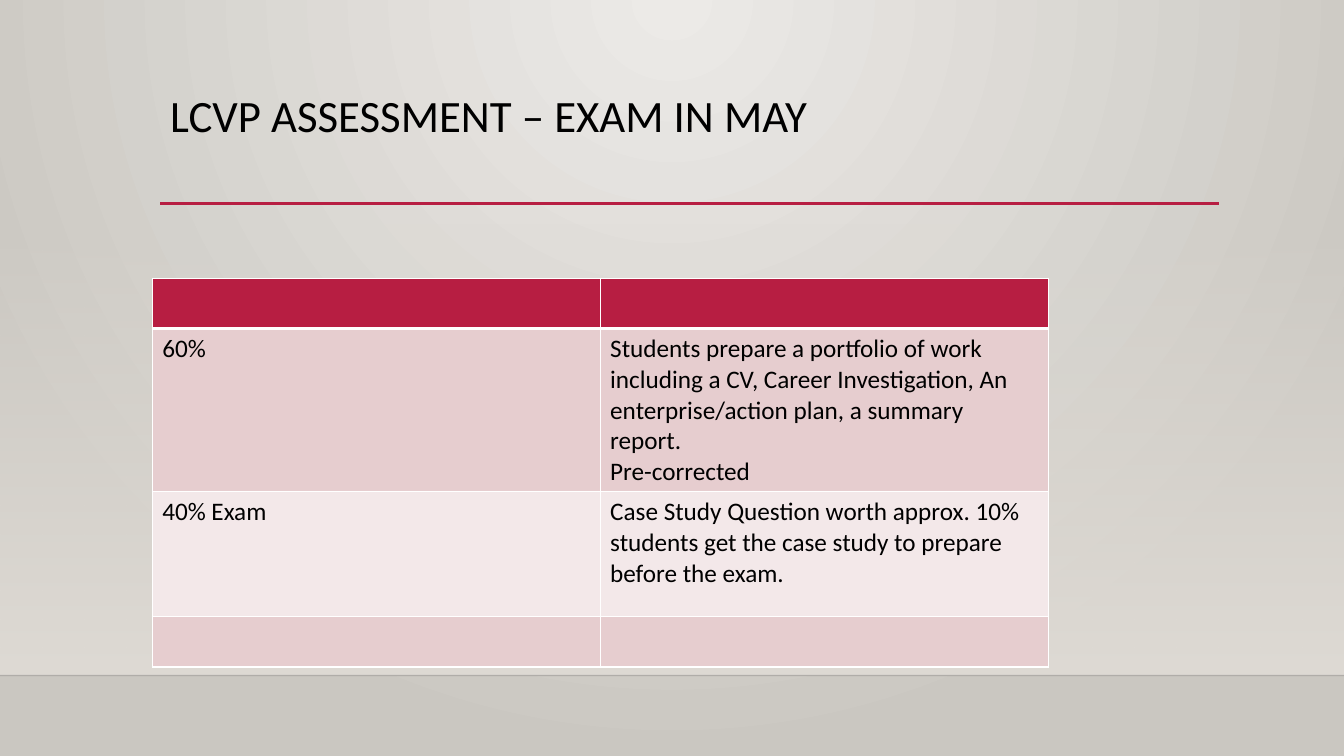
from dataclasses import dataclass

from lxml.etree import SubElement
from pptx import Presentation
from pptx.dml.color import RGBColor
from pptx.enum.shapes import MSO_CONNECTOR as Connector, MSO_SHAPE as Shape
from pptx.enum.text import MSO_ANCHOR as Anchor
from pptx.oxml import parse_xml
from pptx.oxml.ns import nsdecls, qn
from pptx.util import Pt


@dataclass(frozen=True)
class Theme:
    font: str = "Calibri"
    title_size: int = 32
    body_size: int = 18
    text: str = "000000"
    accent: str = "B71E42"
    band_dark: str = "E6CDCF"
    band_light: str = "F3E8E9"
    border: str = "FFFFFF"
    floor_line: str = "000001"
    wall: str = "DFDBD5"
    glow: str = "ECEAE7"
    edge: str = "CAC7C1"


class SlideBuilder:
    def __init__(self, presentation, theme):
        self.theme = theme
        self.slide = presentation.slides.add_slide(presentation.slide_layouts[6])

    def gradient(self, fill, owner, stops, direction):
        fill.gradient()
        old = next(owner.iter(qn("a:gradFill")))
        stop_xml = "".join(
            f'<a:gs pos="{position * 1000}"><a:srgbClr val="{color}">'
            f'<a:alpha val="{opacity * 1000}"/></a:srgbClr></a:gs>'
            for position, color, opacity in stops
        )
        new = parse_xml(
            f'<a:gradFill {nsdecls("a")} rotWithShape="1">'
            f"<a:gsLst>{stop_xml}</a:gsLst>{direction}</a:gradFill>"
        )
        old.getparent().replace(old, new)

    def background(self):
        self.gradient(
            self.slide.background.fill,
            self.slide.element,
            [(0, self.theme.glow, 100), (100, self.theme.edge, 100)],
            '<a:path path="circle"><a:fillToRect l="43000" t="0" r="43000" b="100000"/></a:path>',
        )

    def wall(self, left, top, width, height):
        shape = self.slide.shapes.add_shape(
            Shape.RECTANGLE, Pt(left), Pt(top), Pt(width), Pt(height)
        )
        shape.shadow.inherit = False
        shape.line.fill.background()
        self.gradient(
            shape.fill,
            shape.element,
            [(0, self.theme.wall, 0), (100, self.theme.wall, 100)],
            '<a:lin ang="5400000" scaled="0"/>',
        )

    def rule(self, left, right, top, color, weight, opacity=100):
        connector = self.slide.shapes.add_connector(
            Connector.STRAIGHT, Pt(left), Pt(top), Pt(right), Pt(top)
        )
        connector.line.color.rgb = RGBColor.from_string(color)
        connector.line.width = Pt(weight)
        properties = connector.element.spPr
        if opacity < 100:
            color_element = next(properties.iter(qn("a:srgbClr")))
            SubElement(color_element, qn("a:alpha"), val=str(opacity * 1000))
        SubElement(properties, qn("a:effectLst"))

    def add_text(self, paragraph, text, size):
        run = paragraph.add_run()
        run.text = text
        run.font.name = self.theme.font
        run.font.size = Pt(size)
        run.font.color.rgb = RGBColor.from_string(self.theme.text)

    def title(self, text, left, top, width, height):
        box = self.slide.shapes.add_textbox(Pt(left), Pt(top), Pt(width), Pt(height))
        frame = box.text_frame
        frame.word_wrap = True
        frame.vertical_anchor = Anchor.TOP
        paragraph = frame.paragraphs[0]
        paragraph.line_spacing = 0.9
        self.add_text(paragraph, text, self.theme.title_size)

    def cell(self, cell, lines, fill, top_weight, bottom_weight):
        properties = cell._tc.get_or_add_tcPr()
        weights = {"lnL": 1, "lnR": 1, "lnT": top_weight, "lnB": bottom_weight}
        for side, weight in weights.items():
            properties.append(parse_xml(
                f'<a:{side} {nsdecls("a")} w="{Pt(weight)}"><a:solidFill>'
                f'<a:srgbClr val="{self.theme.border}"/></a:solidFill></a:{side}>'
            ))
        cell.fill.solid()
        cell.fill.fore_color.rgb = RGBColor.from_string(fill)
        frame = cell.text_frame
        for index, line in enumerate(lines):
            paragraph = frame.add_paragraph() if index else frame.paragraphs[0]
            self.add_text(paragraph, line, self.theme.body_size)

    def table(self, rows, left, top, column_width):
        columns = len(rows[0][2])
        height = sum(row[0] for row in rows)
        table = self.slide.shapes.add_table(
            len(rows), columns, Pt(left), Pt(top), Pt(column_width * columns), Pt(height)
        ).table
        table.first_row = table.horz_banding = False
        for column in table.columns:
            column.width = Pt(column_width)
        for index, (row_height, fill, contents) in enumerate(rows):
            table.rows[index].height = Pt(row_height)
            top_weight = 3 if index == 1 else 1
            bottom_weight = 3 if index == 0 else 1
            for column, lines in enumerate(contents):
                self.cell(table.cell(index, column), lines, fill, top_weight, bottom_weight)


def main():
    presentation = Presentation()
    presentation.slide_width, presentation.slide_height = Pt(960), Pt(540)
    theme = Theme()
    builder = SlideBuilder(presentation, theme)
    builder.background()
    builder.wall(0, 159, 960, 323.5)
    builder.rule(0, 960, 482.5, theme.floor_line, 1, opacity=20)
    builder.rule(114.5, 871, 145.3, theme.accent, 2.5)
    builder.title("LCVP ASSESSMENT – EXAM IN MAY", 114.5, 63.3, 756, 82.5)
    portfolio = [
        "Students prepare a portfolio of work including a CV, Career Investigation, "
        "An enterprise/action plan, a summary report.",
        "Pre-corrected",
    ]
    case_study = [
        "Case Study Question worth approx. 10% students get the case study "
        "to prepare before the exam."
    ]
    builder.table(
        [
            (36, theme.accent, ([], [])),
            (116.5, theme.band_dark, (["60%"], portfolio)),
            (89.3, theme.band_light, (["40% Exam"], case_study)),
            (36, theme.band_dark, ([], [])),
        ],
        108.7, 198.7, 320,
    )
    presentation.save("out.pptx")


if __name__ == "__main__":
    main()
